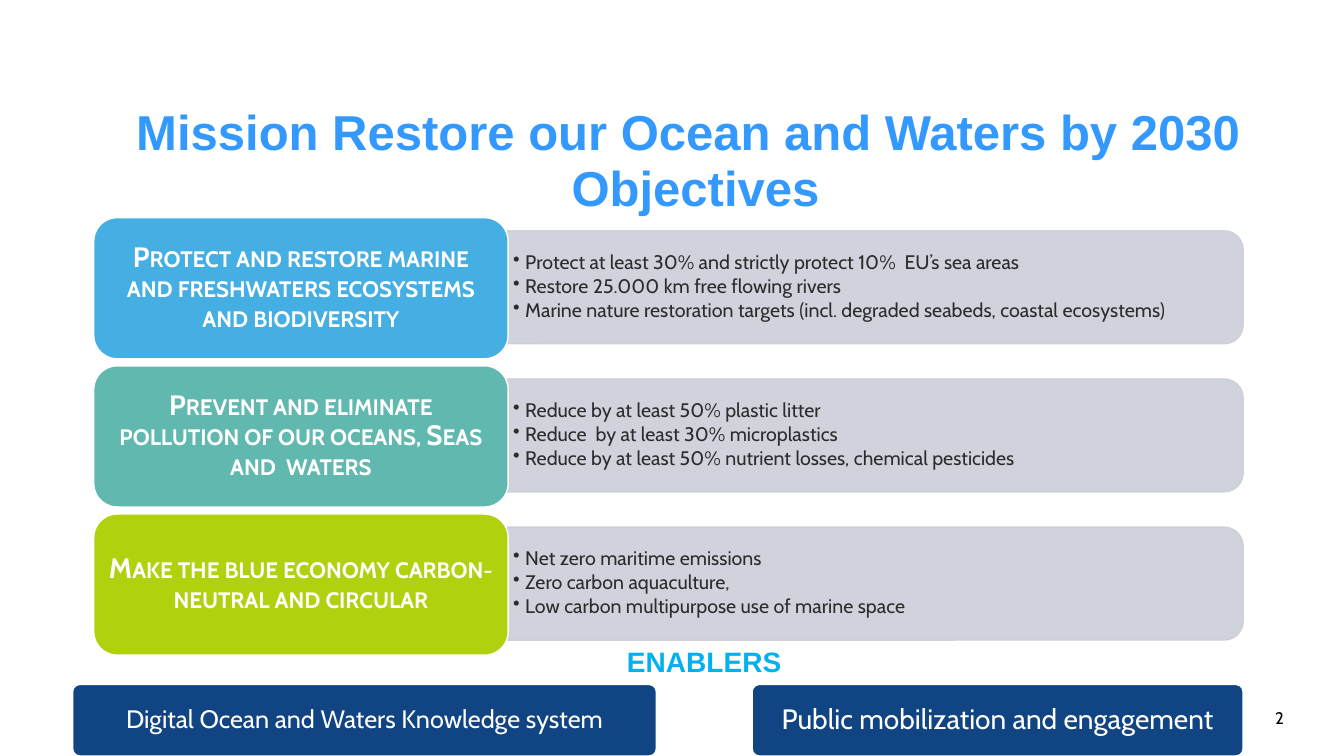
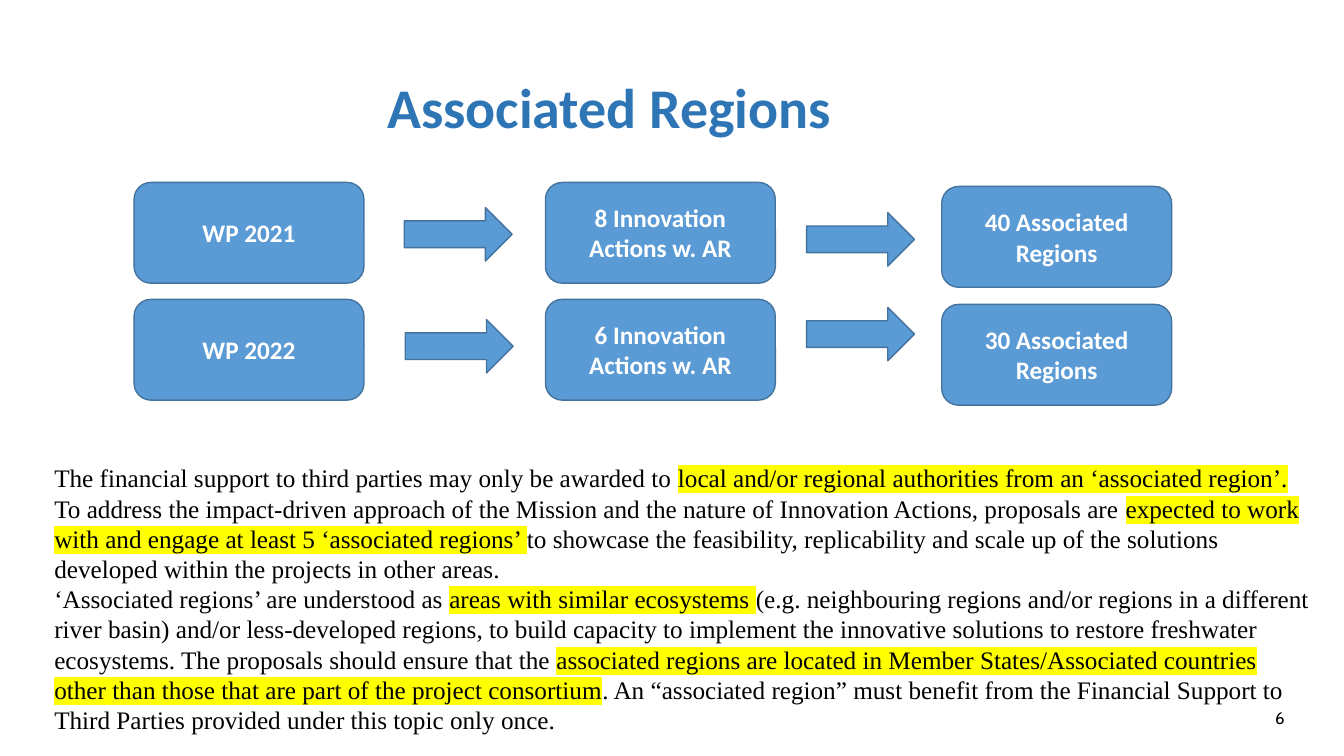
from lxml import etree
from pptx import Presentation
from pptx.dml.color import RGBColor
from pptx.enum.shapes import MSO_SHAPE
from pptx.enum.text import MSO_ANCHOR, MSO_AUTO_SIZE, PP_ALIGN
from pptx.oxml.ns import qn
from pptx.util import Inches, Pt

ROUNDED = MSO_SHAPE.ROUNDED_RECTANGLE
TOP_ROUNDED = MSO_SHAPE.ROUND_2_SAME_RECTANGLE
ARROW = MSO_SHAPE.RIGHT_ARROW
TOP, MIDDLE, BOTTOM = MSO_ANCHOR.TOP, MSO_ANCHOR.MIDDLE, MSO_ANCHOR.BOTTOM
LEFT, CENTER = PP_ALIGN.LEFT, PP_ALIGN.CENTER
NO_AUTOFIT = MSO_AUTO_SIZE.NONE
TITLE_ONLY = 5

COLORS = {
    "white": "FFFFFF", "black": "000000", "ink": "2C2C2C",
    "title_sky": "3399FF", "title_blue": "2E75B6", "enablers": "00B0F0",
    "panel": "CCCFD9", "protect": "45AFE3", "prevent": "61B8AF",
    "economy": "B0D10E", "navy": "104483",
    "flow": "5B9BD5", "flow_edge": "43739E", "marker": "FFFF00",
}

OBJECTIVES = [
    ("protect", "Protect and restore marine and freshwaters ecosystems and biodiversity",
     ["Protect at least 30% and strictly protect 10%  EU’s sea areas",
      "Restore 25.000 km free flowing rivers",
      "Marine nature restoration targets (incl. degraded seabeds, coastal ecosystems)"]),
    ("prevent", "Prevent and eliminate pollution of our oceans, Seas and  waters",
     ["Reduce by at least 50% plastic litter",
      "Reduce  by at least 30% microplastics",
      "Reduce by at least 50% nutrient losses, chemical pesticides"]),
    ("economy", "Make the blue economy carbon- neutral and circular",
     ["Net zero maritime emissions",
      "Zero carbon aquaculture,",
      "Low carbon multipurpose use of marine space"]),
]

# left, width, text size, inset, text
ENABLERS = [
    (0.72, 5.79, 18, 0.07, "Digital Ocean and Waters Knowledge system"),
    (7.46, 4.87, 20, 0.08, "Public mobilization and engagement"),
]

# Each column: left, tops of its two boxes, their texts
FLOW_COLUMNS = [
    (1.33, (1.81, 2.97), ("WP 2021", "WP 2022")),
    (5.41, (1.81, 2.97), ("8 Innovation Actions w. AR", "6 Innovation Actions w. AR")),
    (9.34, (1.85, 3.02), ("40 Associated Regions", "30 Associated Regions")),
]
FLOW_ARROWS = [(4.01, 2.06), (4.02, 3.17), (8, 2.11), (8, 3.05)]

# Each paragraph: (text, highlighted)
SUPPORT_RULES = [
    [("The financial support to third parties may only be awarded to ", False),
     ("local and/or regional authorities from an ‘associated region’.", True)],
    [("To address the impact-driven approach of the Mission and the nature of "
      "Innovation Actions, proposals are ", False),
     ("expected to work with and engage at least 5 ‘associated regions’ ", True),
     ("to showcase the feasibility, replicability and scale up of the solutions "
      "developed within the projects in other areas.", False)],
    [("‘Associated regions’ are understood as ", False),
     ("areas with similar ecosystems ", True),
     ("(e.g. neighbouring regions and/or regions in a different river basin) and/or "
      "less-developed regions, to build capacity to implement the innovative solutions "
      "to restore freshwater ecosystems. The proposals should ensure that the ", False),
     ("associated regions are located in Member States/Associated countries other than "
      "those that are part of the project consortium", True),
     (". An “associated region” must benefit from the Financial Support to Third Parties "
      "provided under this topic only once.", False)],
]


def color(name):
    return RGBColor.from_string(COLORS[name])


def inches(box):
    return [Inches(value) for value in box]


def add_run(para, text, font, size, ink, bold=False):
    run = para.add_run()
    run.text = text
    run.font.name = font
    run.font.size = Pt(size)
    run.font.bold = bold
    run.font.color.rgb = color(ink)
    return run


def highlight(run):
    marker = etree.Element(qn("a:highlight"))
    etree.SubElement(marker, qn("a:srgbClr"), val=COLORS["marker"])
    run.font._element.find(qn("a:solidFill")).addnext(marker)


def set_frame(shape, anchor=TOP, inset=(0.1, 0.05), wrap=True):
    frame = shape.text_frame
    frame.word_wrap = wrap
    frame.auto_size = NO_AUTOFIT
    frame.vertical_anchor = anchor
    frame.margin_left = frame.margin_right = Inches(inset[0])
    frame.margin_top = frame.margin_bottom = Inches(inset[1])
    return frame


def add_text_box(page, box, **frame_options):
    return set_frame(page.shapes.add_textbox(*inches(box)), **frame_options)


def add_filled(page, kind, box, fill, edge):
    shape = page.shapes.add_shape(kind, *inches(box))
    shape.shadow.inherit = False
    shape.fill.solid()
    shape.fill.fore_color.rgb = color(fill)
    shape.line.color.rgb = color(edge)
    shape.line.width = Pt(1)
    return shape


def add_label(shape, text, font, size, bold=False, inset=(0.1, 0.05), spacing=1.0):
    """Centre white text inside a shape and return its run."""
    para = set_frame(shape, MIDDLE, inset).paragraphs[0]
    para.alignment = CENTER
    para.line_spacing = spacing
    return add_run(para, text, font, size, "white", bold)


def add_page(deck, number):
    page = deck.slides.add_slide(deck.slide_layouts[TITLE_ONLY])
    frame = add_text_box(page, (12.55, 6.97, 0.7, 0.4))
    add_run(frame.paragraphs[0], str(number), "Cabin", 12, "black")
    return page


def set_title(page, box, text, font, size, ink, anchor, align, spacing):
    title = page.shapes.title
    title.left, title.top, title.width, title.height = inches(box)
    para = set_frame(title, anchor).paragraphs[0]
    para.alignment = align
    para.line_spacing = spacing
    add_run(para, text, font, size, ink, bold=True)


def add_panel(page, box):
    """Translucent panel rounded on its right side: a top-rounded shape turned by 90 degrees."""
    left, top, width, height = box
    shift = (width - height) / 2
    turned = (left + shift, top - shift, height, width)
    panel = add_filled(page, TOP_ROUNDED, turned, "panel", "panel")
    panel.rotation = 90
    for tint in panel._element.spPr.iter(qn("a:srgbClr")):
        etree.SubElement(tint, qn("a:alpha"), val="90000")


def add_bullets(page, box, lines):
    frame = add_text_box(page, box, anchor=MIDDLE, inset=(0.06, 0.03))
    for index, line in enumerate(lines):
        para = frame.add_paragraph() if index else frame.paragraphs[0]
        para.line_spacing = 0.9
        para.space_after = Pt(2.1)
        properties = para._p.get_or_add_pPr()
        properties.set("marL", str(Inches(0.12)))
        properties.set("indent", str(-Inches(0.12)))
        etree.SubElement(properties, qn("a:buChar"), char="•")
        add_run(para, line, "Cabin", 14, "ink")


def add_objective(page, box, fill, heading, targets):
    left, top, width, height = box
    card_width = 4.11
    panel_left = left + card_width - 0.01
    panel_width = width - card_width
    add_panel(page, (panel_left, top + 0.13, panel_width, height - 0.28))
    add_bullets(page, (panel_left, top + 0.18, panel_width - 0.06, height - 0.39), targets)
    card = add_filled(page, ROUNDED, (left, top, card_width, height), fill, "white")
    run = add_label(card, heading, "Cabin", 20, True, (0.08, 0.04), 0.9)
    run.font._element.set("cap", "small")


def add_enablers(page, top, height):
    frame = add_text_box(page, (6.12, top - 0.45, 1.75, 0.44), wrap=False)
    add_run(frame.paragraphs[0], "ENABLERS", "Arial", 20, "enablers", bold=True)
    for left, width, size, inset, text in ENABLERS:
        bar = add_filled(page, ROUNDED, (left, top, width, height), "navy", "white")
        bar.adjustments[0] = 0.1
        add_label(bar, text, "Cabin", size, inset=(inset, inset), spacing=0.9)


def add_flow(page):
    for left, tops, texts in FLOW_COLUMNS:
        for top, text in zip(tops, texts):
            step = add_filled(page, ROUNDED, (left, top, 2.28, 1), "flow", "flow_edge")
            add_label(step, text, "Calibri", 18, bold=True)
    for left, top in FLOW_ARROWS:
        add_filled(page, ARROW, (left, top, 1.07, 0.53), "flow", "flow_edge")


def add_support_rules(page, box):
    frame = add_text_box(page, box)
    for index, spans in enumerate(SUPPORT_RULES):
        para = frame.add_paragraph() if index else frame.paragraphs[0]
        para.line_spacing = Pt(21.6)
        for text, marked in spans:
            run = add_run(para, text, "Times New Roman", 18, "black")
            if marked:
                highlight(run)


def build_objectives_page(deck):
    page = add_page(deck, 2)
    for row, (fill, heading, targets) in enumerate(OBJECTIVES):
        add_objective(page, (0.93, 2.16 + row * 1.47, 11.41, 1.4), fill, heading, targets)
    add_enablers(page, 6.79, 0.71)
    set_title(page, (0.79, 1, 12.22, 1.16),
              "Mission Restore our Ocean and Waters by 2030  Objectives",
              "Arial", 35, "title_sky", TOP, CENTER, 0.95)


def build_regions_page(deck):
    page = add_page(deck, 6)
    set_title(page, (3.74, 0.58, 5.33, 0.87), "Associated Regions",
              "Calibri", 40, "title_blue", BOTTOM, LEFT, 0.9)
    add_flow(page)
    add_support_rules(page, (0.44, 4.54, 12.67, 2.83))


def main():
    deck = Presentation()
    deck.slide_width, deck.slide_height = Inches(13.33), Inches(7.5)
    build_objectives_page(deck)
    build_regions_page(deck)
    deck.save("out.pptx")


if __name__ == "__main__":
    main()
